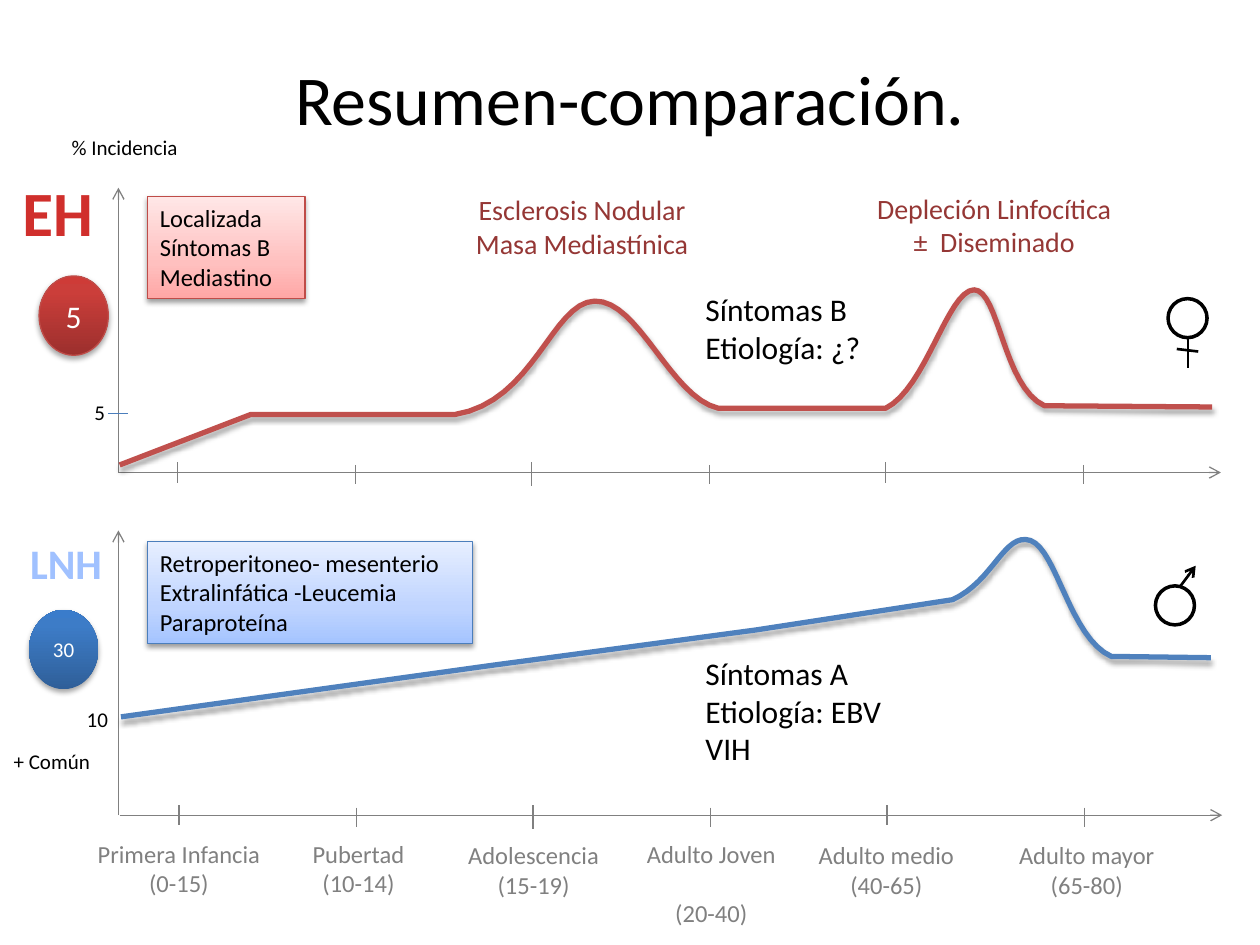
from pptx import Presentation
from pptx.dml.color import RGBColor
from pptx.enum.shapes import MSO_CONNECTOR, MSO_SHAPE
from pptx.enum.text import MSO_ANCHOR, PP_ALIGN
from pptx.oxml import parse_xml
from pptx.oxml.ns import nsdecls, qn
from pptx.util import Inches, Pt

HUES = {"ink": "000000", "white": "FFFFFF", "gray": "808080", "red": "C0504D",
        "blue": "4F81BD", "wine": "953735", "eh": "D02F2C", "lnh": "A0C1FF",
        "red edge": "BF4C48", "blue edge": "4B7EBC"}
FADES = {"pink": [(0, "FFA6A5"), (35, "FFC0BF"), (100, "FFE7E7")],
         "sky": [(0, "A4C4FF"), (35, "BFD4FF"), (100, "E6EEFF")],
         "ruby": [(0, "9C2F2D"), (80, "CB3E3A"), (100, "CE3B37")],
         "navy": [(0, "2F5F99"), (80, "3D7CC7"), (100, "3A7CCB")]}

# left, base of each pair of axes
PANELS = [(0.95, 6.47), (0.94, 3.75)]
# x from the axis, rise above and drop below the base
TICKS = [(0.47, 0.08, 0.08), (1.88, 0.06, 0.09), (3.28, 0.08, 0.08),
         (3.28, 0.05, 0.11), (4.69, 0.06, 0.09), (6.09, 0.08, 0.08),
         (7.66, 0.06, 0.09)]

# two numbers: straight to that point; six: cubic curve
CURVES = [
    ("blue", [(0.96, 5.69), (3.91, 5.28), (6, 5), (7.56, 4.76),
              (7.89, 4.61, 7.97, 4.22, 8.18, 4.29),
              (8.39, 4.37, 8.49, 5.06, 8.82, 5.21), (9.61, 5.22)]),
    ("red", [(0.95, 3.69), (1.99, 3.29), (3.61, 3.29),
             (4.24, 3.19, 4.38, 2.4, 4.72, 2.39),
             (5.07, 2.38, 5.32, 3.15, 5.7, 3.24), (7.03, 3.24),
             (7.35, 3.08, 7.52, 2.31, 7.73, 2.3),
             (7.93, 2.3, 7.96, 3.07, 8.29, 3.22), (9.62, 3.23)]),
]

# kind, box, fade, edge, text, size
CARDS = [
    ("rect", (1.17, 4.3, 2.58, 0.81), "sky", "blue edge",
     "Retroperitoneo- mesenterio\nExtralinfática -Leucemia\nParaproteína", 14),
    ("rect", (1.17, 1.56, 1.25, 0.81), "pink", "red edge",
     "Localizada\nSíntomas B\nMediastino", 14),
    ("oval", (0.23, 4.84, 0.55, 0.63), "navy", None, "30", 12),
    ("oval", (0.31, 2.19, 0.55, 0.63), "ruby", "red edge", "5", 18),
]

# text, box, size, colour, centred, wrapped
NOTES = [
    ("Resumen-comparación.", (0.5, 0.3, 9, 0.95), 40, "ink", True, True),
    ("% Incidencia", (0.47, 1.02, 1.05, 0.3), 12, "ink", False, False),
    ("+ Común", (0.01, 5.89, 0.81, 0.3), 12, "ink", False, False),
    ("5", (0.65, 3.12, 0.29, 0.3), 12, "ink", False, False),
    ("10", (0.59, 5.56, 0.37, 0.3), 12, "ink", False, False),
    ("EH", (0.08, 1.33, 0.78, 0.71), 36, "eh", False, True),
    ("LNH", (0.14, 4.22, 0.78, 0.5), 24, "lnh", False, True),
    ("Esclerosis Nodular\nMasa Mediastínica", (3.67, 1.48, 1.9, 0.64),
     16, "wine", True, False),
    ("Depleción Linfocítica\n±  Diseminado", (6.85, 1.47, 2.08, 0.64),
     16, "wine", True, False),
    ("Síntomas A\nEtiología: EBV\nVIH", (5.5, 5.14, 1.61, 1.01),
     18, "ink", False, False),
    ("Síntomas B\nEtiología: ¿?", (5.5, 2.25, 1.51, 0.71),
     18, "ink", False, False),
]

# label (\v breaks the line), left, top, width
AGES = [("Primera Infancia\v(0-15)", 0.64, 6.61, 1.56),
        ("Pubertad\v(10-14)", 2.22, 6.61, 1.25),
        ("Adolescencia\v(15-19)", 3.61, 6.62, 1.25),
        ("Adulto Joven \v(20-40)", 5.02, 6.61, 1.25),
        ("Adulto medio\v(40-65)", 6.33, 6.62, 1.41),
        ("Adulto mayor\v(65-80)", 7.92, 6.62, 1.41)]

RINGS = [(9.27, 2.37), (9.17, 4.65)]
# ends and arrowhead of the strokes on the two rings
STROKES = [((9.43, 2.92, 9.43, 2.68), False), ((9.51, 2.79, 9.34, 2.77), False),
           ((9.37, 4.65, 9.49, 4.49), True)]

deck = Presentation()
deck.slide_width, deck.slide_height = Inches(10), Inches(7.5)
slide = deck.slides.add_slide(deck.slide_layouts[6])
shapes = slide.shapes


def hue(name):
    return RGBColor.from_string(HUES[name])


def node(text):
    """Parse one element that uses the a: prefix."""
    return parse_xml(f'<a:wrap {nsdecls("a")}>{text}</a:wrap>')[0]


def edge(shape, name, width):
    shape.line.color.rgb = hue(name)
    shape.line.width = Pt(width)


def line(ends, name="gray", width=0.75, arrow=False):
    rule = shapes.add_connector(MSO_CONNECTOR.STRAIGHT, *map(Inches, ends))
    edge(rule, name, width)
    props = rule._element.spPr
    if arrow:
        props.find(qn("a:ln")).append(node('<a:tailEnd type="arrow"/>'))
    props.append(node("<a:effectLst/>"))


def shade(shape, alpha, dist):
    shape.shadow.inherit = False
    shape._element.spPr.find(qn("a:effectLst")).append(node(
        f'<a:outerShdw blurRad="{Pt(3.1)}" dist="{Pt(dist)}" dir="5400000" '
        f'rotWithShape="0"><a:srgbClr val="000000"><a:alpha val="{alpha * 1000}"/>'
        '</a:srgbClr></a:outerShdw>'))


def fade(shape, stops):
    shape.fill.gradient()
    shape.fill.gradient_angle = 90
    ramp = shape._element.spPr.find(qn("a:gradFill")).find(qn("a:gsLst"))
    for old in list(ramp):
        ramp.remove(old)
    for spot, tint in stops:
        ramp.append(node(f'<a:gs pos="{spot * 1000}"><a:srgbClr val="{tint}"/></a:gs>'))


def write(shape, text, size, name, mid=False, wrap=True, bold=False,
          anchor=MSO_ANCHOR.TOP):
    frame = shape.text_frame
    frame.word_wrap, frame.vertical_anchor = wrap, anchor
    frame.text = text
    for para in frame.paragraphs:
        para.alignment = PP_ALIGN.CENTER if mid else PP_ALIGN.LEFT
        font = para.font
        font.name, font.size, font.bold = "Calibri", Pt(size), bold
        font.color.rgb = hue(name)


def trace(steps, count=16):
    """Points along the straight and cubic steps."""
    dots = [steps[0]]
    for step in steps[1:]:
        if len(step) == 2:
            dots.append(step)
            continue
        ctrl = [dots[-1], step[:2], step[2:4], step[4:]]
        for i in range(1, count + 1):
            t = i / count
            load = ((1 - t) ** 3, 3 * t * (1 - t) ** 2, 3 * t * t * (1 - t), t ** 3)
            dots.append(tuple(sum(w * c[k] for w, c in zip(load, ctrl))
                              for k in (0, 1)))
    return dots


for left, base in PANELS:
    line((0.94, base, 0.94, base - 2.26), arrow=True)
    line((left, base, left + 8.75, base), arrow=True)
    for x, rise, drop in TICKS:
        line((left + x, base - rise, left + x, base + drop))
line((0.86, 3.28, 1.02, 3.28), "blue edge")

for name, steps in CURVES:
    dots = [(Inches(x), Inches(y)) for x, y in trace(steps)]
    pen = shapes.build_freeform(*dots[0])
    pen.add_line_segments(dots[1:], close=False)
    curve = pen.convert_to_shape()
    curve.fill.background()
    edge(curve, name, 3)
    shade(curve, 35, 1.8)

for kind, box, ramp, rim, text, size in CARDS:
    oval = kind == "oval"
    card = shapes.add_shape(MSO_SHAPE.OVAL if oval else MSO_SHAPE.RECTANGLE,
                            *map(Inches, box))
    fade(card, FADES[ramp])
    if rim:
        edge(card, rim, 0.75)
    else:
        card.line.fill.background()
    shade(card, 35 if oval else 38, 1.8 if oval else 1.6)
    write(card, text, size, "white" if oval else "ink", mid=oval,
          anchor=MSO_ANCHOR.MIDDLE if oval else MSO_ANCHOR.TOP)

for x, y in RINGS:
    ring = shapes.add_shape(MSO_SHAPE.OVAL, *map(Inches, (x, y, 0.31, 0.31)))
    ring.shadow.inherit = False
    ring.fill.background()
    edge(ring, "ink", 2)
for ends, arrow in STROKES:
    line(ends, "ink", 1.5, arrow)

for text, box, size, name, mid, wrap in NOTES:
    write(shapes.add_textbox(*map(Inches, box)), text, size, name, mid, wrap,
          bold=name in ("eh", "lnh"),
          anchor=MSO_ANCHOR.MIDDLE if size == 40 else MSO_ANCHOR.TOP)
for text, x, y, width in AGES:
    write(shapes.add_textbox(*map(Inches, (x, y, width, 0.57))), text, 14, "gray", True)

deck.save("out.pptx")
